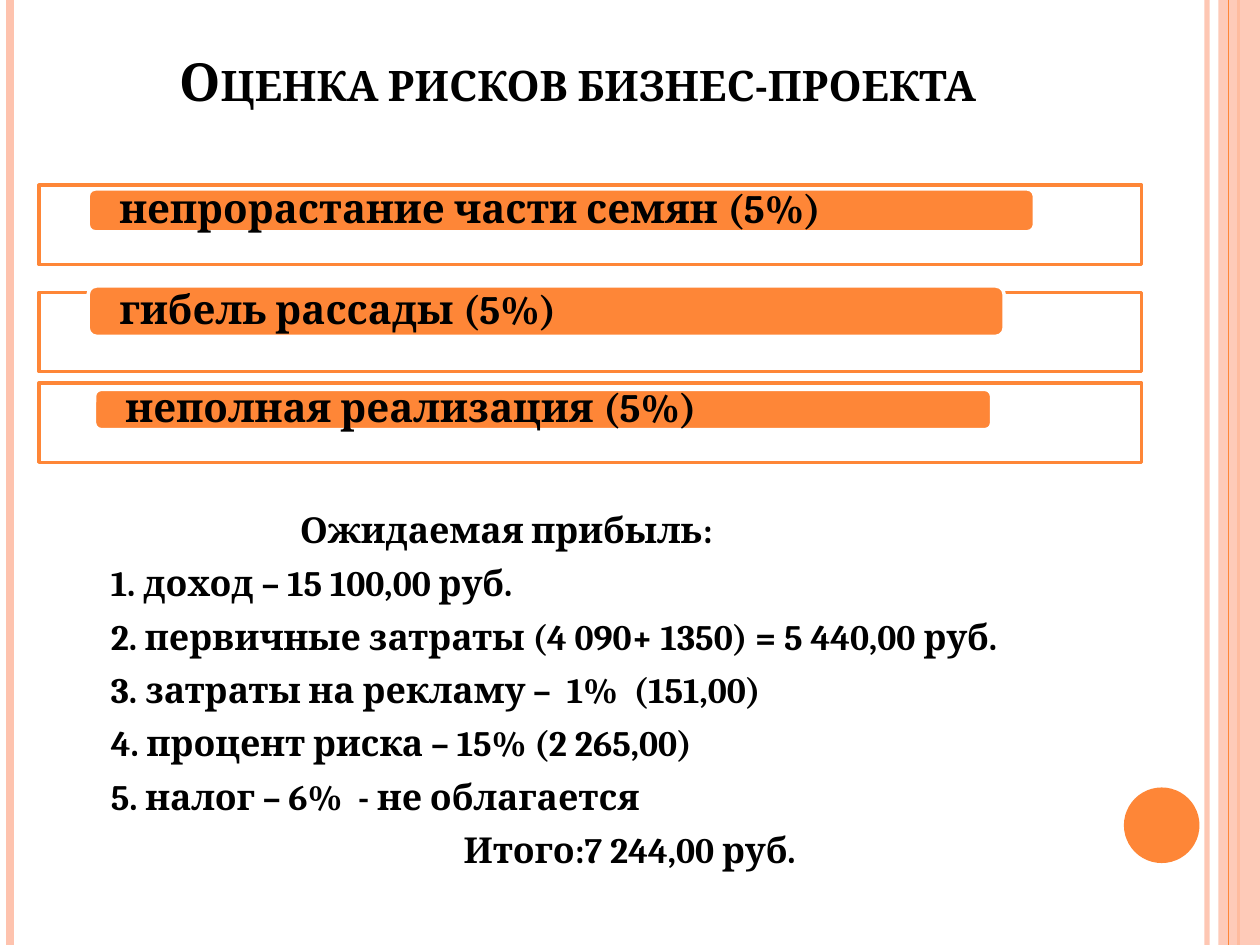
from dataclasses import dataclass

from lxml.etree import SubElement
from pptx import Presentation
from pptx.dml.color import RGBColor
from pptx.enum.shapes import MSO_CONNECTOR as Connector, MSO_SHAPE as Shape
from pptx.enum.text import MSO_ANCHOR as Anchor, MSO_AUTO_SIZE as AutoSize, PP_ALIGN as Align
from pptx.oxml.ns import qn
from pptx.util import Inches, Pt


@dataclass(frozen=True)
class Theme:
    """Colours, font and type sizes of the deck."""
    orange: str = "FE8637"
    peach: str = "FEC3AE"
    white: str = "FFFFFF"
    ink: str = "000000"
    font: str = "Cambria"
    title_size: float = 30
    risk_size: float = 23
    body_size: float = 20.4


THEME = Theme()

RISKS = [
    ("непрорастание части семян (5%)", 1.47, (0.7, 1.5, 7.51, 0.34)),
    ("гибель рассады (5%)", 2.32, (0.7, 2.27, 7.27, 0.4)),
    ("неполная реализация (5%)", 3.04, (0.75, 3.09, 7.12, 0.32)),
]

PROFIT = [
    ("Ожидаемая прибыль:", 1.81),
    ("1. доход – 15 100,00 руб.", 0.31),
    ("2. первичные затраты (4 090+ 1350) = 5 440,00 руб.", 0.31),
    ("3. затраты на рекламу –  1%  (151,00)", 0.31),
    ("4. процент риска – 15% (2 265,00)", 0.31),
    ("5. налог – 6%  - не облагается", 0.31),
    ("Итого:7 244,00 руб.", 3.11),
]


def apply(target, **values):
    """Set each named attribute on the target."""
    for name, value in values.items():
        setattr(target, name, value)


def place(item, box):
    """Move an item to a box given in inches."""
    apply(item, **dict(zip(("left", "top", "width", "height"), map(Inches, box))))


def set_alpha(element, percent):
    """Make the solid colour inside an element partly transparent."""
    color = next(element.iter(qn("a:srgbClr")))
    SubElement(color, qn("a:alpha")).set("val", str(percent * 1000))


def add_span(para, text, size):
    """Add bold text in the theme font and return its run."""
    span = para.add_run()
    span.text = text
    apply(span.font, name=THEME.font, size=Pt(size), bold=True)
    span.font.color.rgb = RGBColor.from_string(THEME.ink)
    return span


def add_box(page, kind, box, fill, line=None, alpha=None):
    """Add a flat preset shape, with an outline if a line colour is given."""
    shape = page.shapes.add_shape(kind, *map(Inches, box))
    shape.shadow.inherit = False
    shape.fill.solid()
    shape.fill.fore_color.rgb = RGBColor.from_string(fill)
    if alpha:
        set_alpha(shape.fill._xPr, alpha)
    if line:
        shape.line.color.rgb = RGBColor.from_string(line)
        shape.line.width = Pt(2)
    else:
        shape.line.fill.background()
    return shape


def add_stripe(page, x, height, color, width, alpha=None):
    """Add a vertical line from the top edge of the page."""
    stripe = page.shapes.add_connector(Connector.STRAIGHT, Inches(x), 0, Inches(x), Inches(height))
    stripe.line.color.rgb = RGBColor.from_string(color)
    stripe.line.width = Pt(width)
    properties = stripe._element.spPr
    SubElement(properties, qn("a:effectLst"))
    if alpha:
        set_alpha(properties, alpha)


def add_decor(page, box):
    """Draw the edge stripes and the circle within the page box."""
    left, top, width, height = box
    right = left + width
    add_stripe(page, right - 0.42, height, THEME.peach, 3, 93)
    add_stripe(page, left + 0.08, height, THEME.peach, 4.5)
    add_stripe(page, right - 0.17, height, THEME.orange, 1.5)
    add_box(page, Shape.RECTANGLE, (right - 0.33, top, 0.33, height), THEME.peach, alpha=87)
    add_stripe(page, right - 0.25, height, THEME.orange, 0.75)
    add_box(page, Shape.OVAL, (right - 1.08, top + 6.25, 0.6, 0.6), THEME.orange)


def fill_title(title, box, text):
    """Place the title and set it in centred small capitals."""
    place(title, box)
    frame = title.text_frame
    apply(frame, vertical_anchor=Anchor.BOTTOM, word_wrap=True, auto_size=AutoSize.NONE)
    para = frame.paragraphs[0]
    para.alignment = Align.CENTER
    span = add_span(para, text, THEME.title_size)
    span.font._element.set("cap", "small")


def add_risk(page, frame_box, bar_box, text):
    """Draw an outlined frame with a labelled bar over it."""
    add_box(page, Shape.RECTANGLE, frame_box, THEME.white, THEME.orange, alpha=90)
    bar = add_box(page, Shape.ROUNDED_RECTANGLE, bar_box, THEME.orange, THEME.white)
    frame = bar.text_frame
    apply(frame, vertical_anchor=Anchor.MIDDLE, word_wrap=True,
          margin_left=Inches(0.23), margin_right=Inches(0.23), margin_top=0, margin_bottom=0)
    para = frame.paragraphs[0]
    apply(para, alignment=Align.LEFT, line_spacing=0.9)
    add_span(para, text, THEME.risk_size)


def fill_profit(body, box, lines):
    """Place the body and list the profit lines at their indents."""
    place(body, box)
    frame = body.text_frame
    apply(frame, vertical_anchor=Anchor.TOP, word_wrap=True, auto_size=AutoSize.NONE)
    for index, (text, indent) in enumerate(lines):
        para = frame.add_paragraph() if index else frame.paragraphs[0]
        apply(para, alignment=Align.LEFT, space_before=Pt(6))
        properties = para._p.get_or_add_pPr()
        properties.set("marL", str(Inches(indent)))
        properties.set("indent", "0")
        SubElement(properties, qn("a:buNone"))
        add_span(para, text, THEME.body_size)


def main():
    """Build the slide and save the deck."""
    deck = Presentation()
    apply(deck, slide_width=Inches(10), slide_height=Inches(7.5))
    page = deck.slides.add_slide(deck.slide_layouts[1])
    add_decor(page, (0, 0, 10, 7.5))
    fill_title(page.shapes.title, (0.5, 0.3, 8.17, 0.64), "Оценка рисков бизнес-проекта")
    for text, top, bar_box in RISKS:
        add_risk(page, (0.31, top, 8.75, 0.63), bar_box, text)
    fill_profit(page.placeholders[1], (0.47, 3.98, 8.17, 3.13), PROFIT)
    deck.save("out.pptx")


if __name__ == "__main__":
    main()
